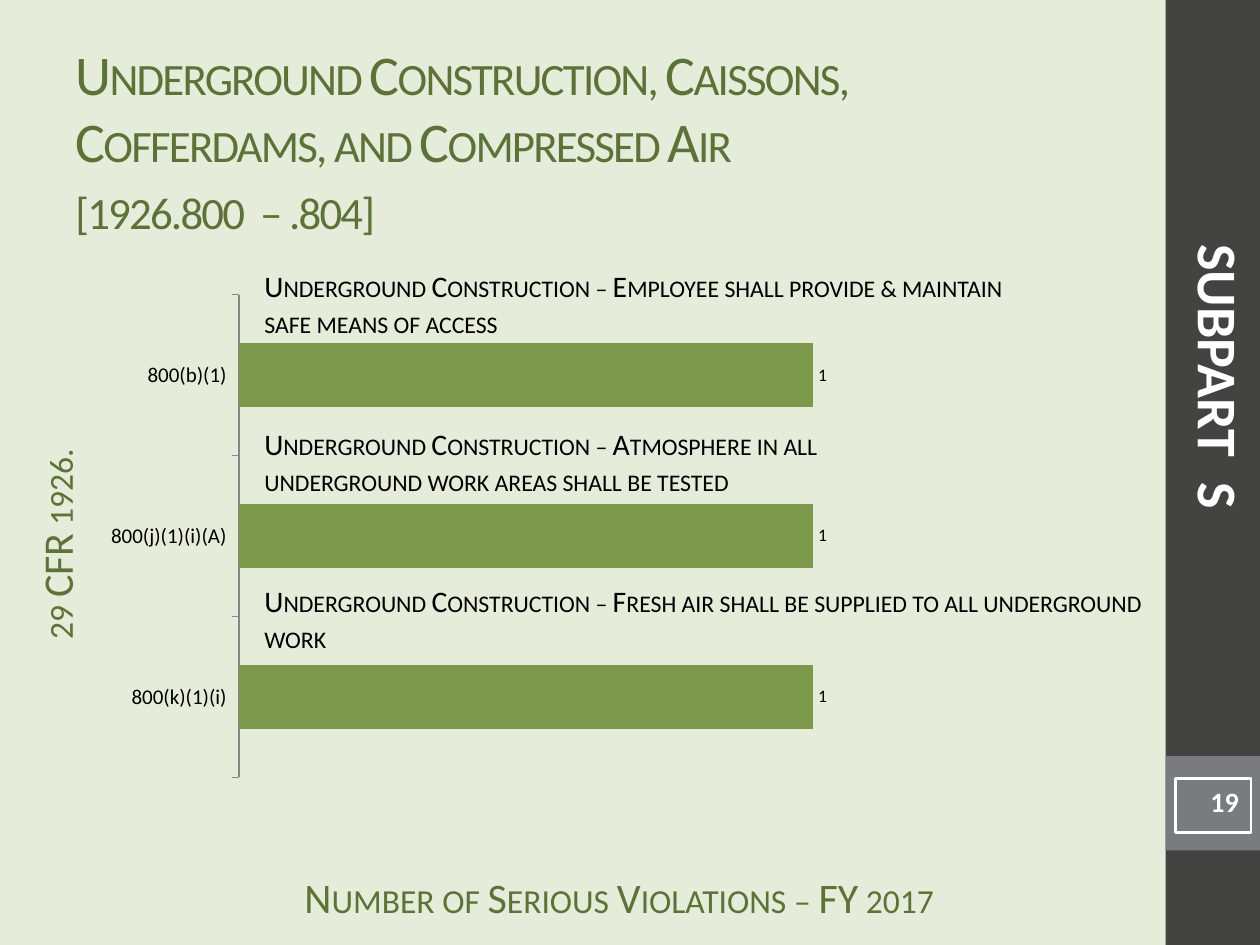
"""Build the Subpart S slide with its bar chart of serious violations."""
from lxml import etree
from pptx import Presentation
from pptx.chart.data import CategoryChartData
from pptx.dml.color import RGBColor
from pptx.enum.chart import XL_CHART_TYPE as ChartType, XL_LABEL_POSITION as LabelPos, XL_TICK_MARK as Tick
from pptx.enum.shapes import MSO_SHAPE as Shape
from pptx.enum.text import MSO_ANCHOR as Anchor, PP_ALIGN as Align
from pptx.oxml.ns import qn
from pptx.util import Inches, Pt

FONT = "Calibri"
PAPER, DARK, GREY = "E5ECD9", "434342", "797B7E"
GREEN, BAR, WHITE, BLACK = "5D7238", "7C984A", "FFFFFF", "000000"

TITLE = "Underground Construction, Caissons, Cofferdams, and Compressed Air\v[1926.800  – .804]"
VALUE_TITLE = "Number of Serious Violations – FY 2017"
CATEGORY_TITLE = "29 CFR 1926."
SUBPART = "SUBPART  S"
PAGE_NUMBER = "19"
VIOLATIONS = [("800(k)(1)(i)", 1), ("800(j)(1)(i)(A)", 1), ("800(b)(1)", 1)]
CAPTIONS = [
    ("Underground Construction – Employee shall provide & maintain safe means of access", 6.08),
    ("Underground Construction – Atmosphere in all underground work areas shall be tested", 5.83),
    ("Underground Construction – Fresh air shall be supplied to all underground work", 7.19),
]
CAPTION_TOP, CAPTION_STEP = 2.08, 1.25
PLOT = {"x": 0.17, "y": 0.02, "w": 0.81, "h": 0.96}


def color(value):
    return RGBColor.from_string(value)


def inches(at):
    return [Inches(length) for length in at]


def add_block(page, at, fill=None, line=None):
    block = page.shapes.add_shape(Shape.RECTANGLE, *inches(at))
    block.shadow.inherit = False
    if fill:
        block.fill.solid()
        block.fill.fore_color.rgb = color(fill)
    else:
        block.fill.background()
    if line:
        block.line.color.rgb = color(line)
        block.line.width = Pt(1.5)
    else:
        block.line.fill.background()
    return block


def write(box, text, size, ink, align=Align.LEFT, anchor=Anchor.TOP,
          bold=False, small_caps=False, spacing=0, top=0.05):
    frame = box.text_frame
    frame.word_wrap = True
    frame.vertical_anchor = anchor
    frame.margin_top = Inches(top)
    para = frame.paragraphs[0]
    para.text = text
    para.alignment = align
    for span in para.runs:
        span.font.name = FONT
        span.font.size = Pt(size)
        span.font.bold = bold
        span.font.color.rgb = color(ink)
        properties = span.font._element
        if small_caps:
            properties.set("cap", "small")
        if spacing:
            properties.set("spc", str(spacing * 100))


def add_text(page, at, text, size, ink, rotation=0, **style):
    box = page.shapes.add_textbox(*inches(at))
    box.rotation = rotation
    write(box, text, size, ink, **style)


def set_plot_area(chart):
    area = chart._chartSpace.chart.plotArea
    for old in area.findall(qn("c:layout")):
        area.remove(old)
    layout = etree.Element(qn("c:layout"))
    area.insert(0, layout)
    manual = etree.SubElement(layout, qn("c:manualLayout"))
    settings = {"layoutTarget": "inner", "xMode": "edge", "yMode": "edge", **PLOT}
    for name, value in settings.items():
        etree.SubElement(manual, qn(f"c:{name}")).set("val", str(value))


def add_violations_chart(page):
    data = CategoryChartData()
    data.categories = [name for name, count in VIOLATIONS]
    data.add_series("Series 1", [count for name, count in VIOLATIONS])
    chart = page.shapes.add_chart(
        ChartType.BAR_CLUSTERED, *inches((0.75, 2.26, 6.75, 3.99)), data).chart
    chart.has_legend = chart.has_title = False
    chart.font.name, chart.font.size = FONT, Pt(10)
    chart.font.color.rgb = color(BLACK)
    set_plot_area(chart)

    axis = chart.category_axis
    axis.major_tick_mark = Tick.OUTSIDE
    axis.tick_labels.font.size = Pt(12)
    axis.format.line.color.rgb = color("868686")
    scale = chart.value_axis
    scale.visible = scale.has_major_gridlines = False
    scale.minimum_scale, scale.maximum_scale = 0, 1.2

    plot = chart.plots[0]
    plot.gap_width = 150
    plot.vary_by_categories = False
    bars = plot.series[0].format.fill
    bars.solid()
    bars.fore_color.rgb = color(BAR)
    plot.has_data_labels = True
    plot.data_labels.show_value = True
    plot.data_labels.position = LabelPos.OUTSIDE_END


def main():
    deck = Presentation()
    deck.slide_width, deck.slide_height = inches((10, 7.5))
    page = deck.slides.add_slide(deck.slide_layouts[6])
    page.background.fill.solid()
    page.background.fill.fore_color.rgb = color(PAPER)

    add_block(page, (9.25, 0, 0.75, 7.5), fill=DARK)
    add_block(page, (9.25, 6, 0.75, 0.75), fill=GREY)
    axis_style = {"align": Align.CENTER, "small_caps": True, "top": 0}
    add_text(page, (2.08, 6.92, 5.67, 0.33), VALUE_TITLE, 24, GREEN, **axis_style)
    add_text(page, (-1.56, 4.03, 4.19, 0.58), CATEGORY_TITLE, 24, GREEN, rotation=270, **axis_style)
    add_violations_chart(page)
    add_text(page, (0.5, 0.3, 8.33, 1.62), TITLE, 32, GREEN,
             anchor=Anchor.MIDDLE, small_caps=True, spacing=-1)
    number = add_block(page, (9.33, 6.18, 0.6, 0.43), line=WHITE)
    write(number, PAGE_NUMBER, 16, WHITE, align=Align.RIGHT, bold=True)
    for row, (caption, width) in enumerate(CAPTIONS):
        top = CAPTION_TOP + row * CAPTION_STEP
        add_text(page, (2, top, width, 0.67), caption, 17, BLACK, small_caps=True)
    add_text(page, (6.69, 2.67, 5.98, 0.64), SUBPART, 32, WHITE,
             rotation=90, align=Align.CENTER, bold=True)
    deck.save("out.pptx")


if __name__ == "__main__":
    main()
